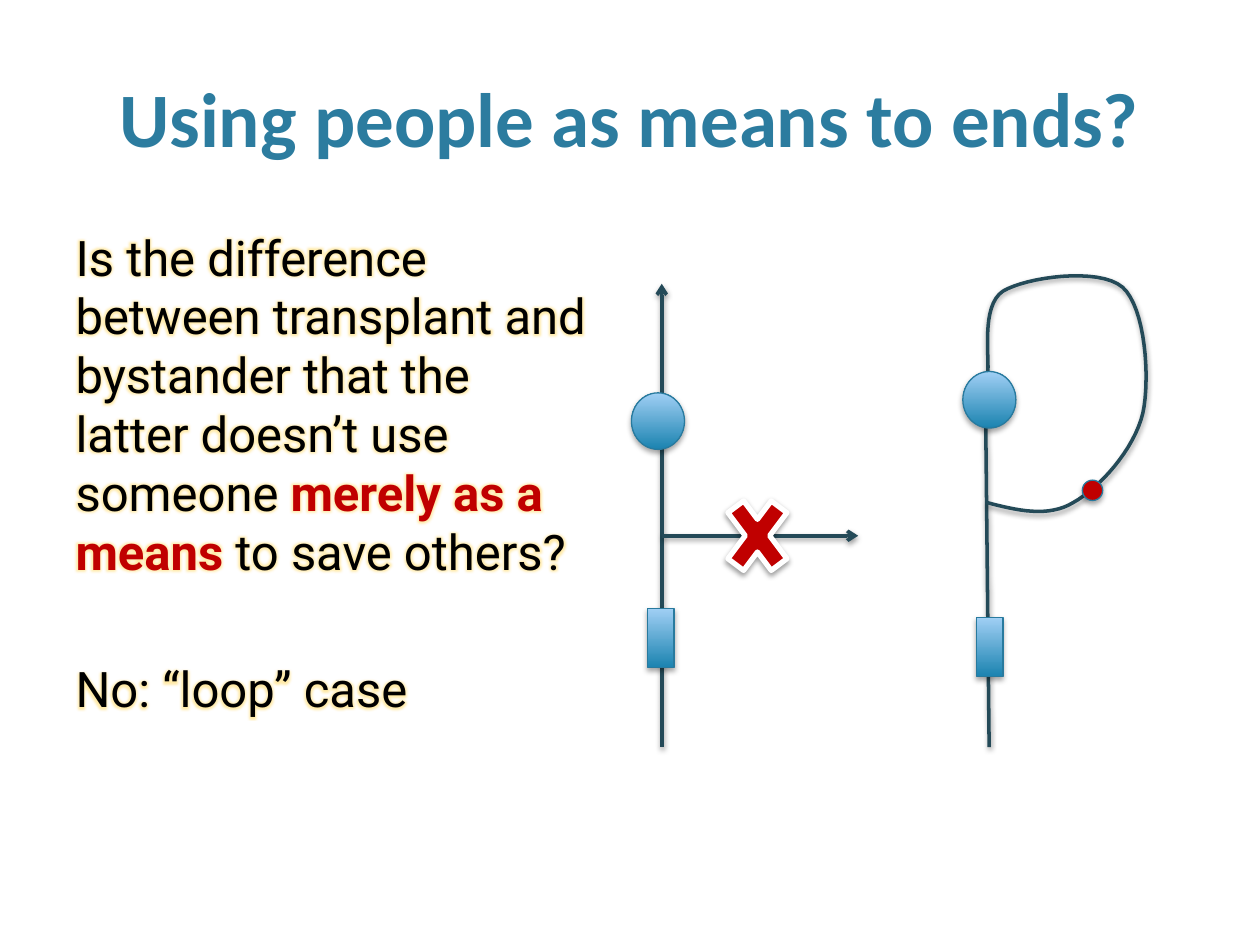
"""Build the slide comparing the bystander and loop trolley cases."""
from lxml import etree
from pptx import Presentation
from pptx.dml.color import RGBColor
from pptx.enum.shapes import MSO_CONNECTOR, MSO_SHAPE
from pptx.enum.text import MSO_ANCHOR, MSO_AUTO_SIZE, PP_ALIGN
from pptx.oxml.ns import qn
from pptx.util import Cm, Pt

STRAIGHT = MSO_CONNECTOR.STRAIGHT
OVAL, RECTANGLE, MULTIPLY = MSO_SHAPE.OVAL, MSO_SHAPE.RECTANGLE, MSO_SHAPE.MATH_MULTIPLY
MIDDLE, TOP = MSO_ANCHOR.MIDDLE, MSO_ANCHOR.TOP
CENTER, LEFT = PP_ALIGN.CENTER, PP_ALIGN.LEFT
NO_AUTOFIT = MSO_AUTO_SIZE.NONE

COLORS = {
    "title": "2C7C9F", "text": "000000", "red": "C00000", "glow": "FFD54F",
    "track": "244A58", "outline": "287A9E", "dark": "1B83B0", "light": "A0CFF4",
    "white": "FFFFFF", "shadow": "000000",
}
TITLE = "Using people as means to ends?"
TITLE_BOX = (1.27, 0.76, 22.86, 3.18)
BODY_BOX = (1.27, 4.45, 10.82, 12.98)
PARAGRAPHS = [
    (5.6, [
        ("Is the difference between transplant and bystander that the latter "
         "doesn’t use someone ", False),
        ("merely as a means ", True),
        ("to save others?", False),
    ]),
    (45, [("No: “loop” case", False)]),
]

PARTS = {
    "people": (OVAL, 1.07, 1.14, None),
    "person": (OVAL, 0.41, 0.41, "red"),
    "trolley": (RECTANGLE, 0.53, 1.19, None),
}
BYSTANDER_TRACKS = [(13.34, 15.06, 13.34, 5.72), (13.34, 10.8, 17.3, 10.8)]
BYSTANDER_PARTS = [("people", 12.73, 7.92), ("person", 15.04, 10.59), ("trolley", 13.06, 12.27)]
LOOP_TRACK = (19.94, 15.06, 19.86, 7.49)
LOOP_PARTS = [("trolley", 19.69, 12.45), ("person", 21.82, 9.68), ("people", 19.41, 7.49)]
LOOP_START = (19.89, 10.13)
LOOP_CURVES = [
    ((20.5, 10.29), (21.13, 10.44), (21.64, 10.13)),
    ((22.17, 9.83), (22.86, 9.07), (23.04, 8.33)),
    ((23.19, 7.62), (23.09, 6.2), (22.63, 5.79)),
    ((22.15, 5.38), (20.68, 5.59), (20.22, 5.87)),
    ((19.76, 6.17), (19.96, 7.26), (19.91, 7.54)),
]
CURVE_STEPS = 16
CROSS_BOX = (14.43, 9.68, 1.68, 2.24)


def rgb(color):
    return RGBColor.from_string(COLORS[color])


def add_effect(parent, kind, color, opacity, **attributes):
    effects = etree.SubElement(parent, qn("a:effectLst"))
    effect = etree.SubElement(effects, qn(f"a:{kind}"), attributes)
    tone = etree.SubElement(effect, qn("a:srgbClr"), val=COLORS[color])
    etree.SubElement(tone, qn("a:alpha"), val=str(opacity * 1000))


def outline(shape, color, width, opacity=38, distance=1.6):
    shape.line.color.rgb = rgb(color)
    shape.line.width = Pt(width)
    add_effect(shape.element.spPr, "outerShdw", "shadow", opacity,
               blurRad=str(Pt(3.1)), dist=str(Pt(distance)), dir="5400000",
               rotWithShape="0")


def add_track(shapes, ends, arrow=False):
    track = shapes.add_connector(STRAIGHT, *map(Cm, ends))
    outline(track, "track", 2)
    if arrow:
        line = track.element.spPr.find(qn("a:ln"))
        etree.SubElement(line, qn("a:tailEnd"), type="arrow")


def add_parts(shapes, parts):
    for role, left, top in parts:
        preset, width, height, color = PARTS[role]
        part = shapes.add_shape(preset, Cm(left), Cm(top), Cm(width), Cm(height))
        if color:
            part.fill.solid()
            part.fill.fore_color.rgb = rgb(color)
        else:
            part.fill.gradient()
            part.fill.gradient_angle = 90
            for stop, tone in zip(part.fill.gradient_stops, ("dark", "light")):
                stop.color.rgb = rgb(tone)
        outline(part, "outline", 0.75, 35, 1.8)


def curve_points(start, curves):
    points = []
    for first, second, end in curves:
        for step in range(1, CURVE_STEPS + 1):
            t = step / CURVE_STEPS
            u = 1 - t
            points.append(tuple(
                Cm(u**3 * a + 3 * u * u * t * b + 3 * u * t * t * c + t**3 * d)
                for a, b, c, d in zip(start, first, second, end)))
        start = end
    return points


def add_loop(shapes):
    builder = shapes.build_freeform(*map(Cm, LOOP_START))
    builder.add_line_segments(curve_points(LOOP_START, LOOP_CURVES), close=False)
    loop = builder.convert_to_shape()
    loop.fill.background()
    outline(loop, "track", 2)


def place(placeholder, box, anchor):
    placeholder.left, placeholder.top, placeholder.width, placeholder.height = map(Cm, box)
    frame = placeholder.text_frame
    frame.word_wrap = True
    frame.auto_size = NO_AUTOFIT
    frame.vertical_anchor = anchor
    return frame


def style(run, font, size, color, bold):
    run.font.name = font
    run.font.size = Pt(size)
    run.font.bold = bold
    run.font.color.rgb = rgb(color)


def write_title(placeholder):
    frame = place(placeholder, TITLE_BOX, MIDDLE)
    frame.text = TITLE
    heading = frame.paragraphs[0]
    heading.alignment = CENTER
    style(heading.runs[0], "Calibri", 44, "title", True)


def write_body(placeholder):
    frame = place(placeholder, BODY_BOX, TOP)
    for index, (space, pieces) in enumerate(PARAGRAPHS):
        paragraph = frame.add_paragraph() if index else frame.paragraphs[0]
        paragraph.alignment = LEFT
        paragraph.space_before = Pt(space)
        properties = paragraph._p.get_or_add_pPr()
        properties.set("marL", "0")
        properties.set("indent", "0")
        etree.SubElement(properties, qn("a:buNone"))
        for wording, stressed in pieces:
            run = paragraph.add_run()
            run.text = wording
            run.font.color.rgb = rgb("text")
            add_effect(run._r.get_or_add_rPr(), "glow", "glow", 50, rad=str(Pt(5)))
            style(run, "Roboto", 28, "red" if stressed else "text", stressed)


def main():
    deck = Presentation()
    deck.slide_width, deck.slide_height = Cm(25.4), Cm(19.05)
    slide = deck.slides.add_slide(deck.slide_layouts[1])
    write_title(slide.shapes.title)
    write_body(slide.placeholders[1])

    bystander = slide.shapes.add_group_shape().shapes
    for ends in BYSTANDER_TRACKS:
        add_track(bystander, ends, arrow=True)
    add_parts(bystander, BYSTANDER_PARTS)

    add_track(slide.shapes, LOOP_TRACK)
    add_loop(slide.shapes)
    add_parts(slide.shapes, LOOP_PARTS)

    cross = slide.shapes.add_shape(MULTIPLY, *map(Cm, CROSS_BOX))
    cross.fill.solid()
    cross.fill.fore_color.rgb = rgb("red")
    outline(cross, "white", 3)
    deck.save("out.pptx")


if __name__ == "__main__":
    main()
